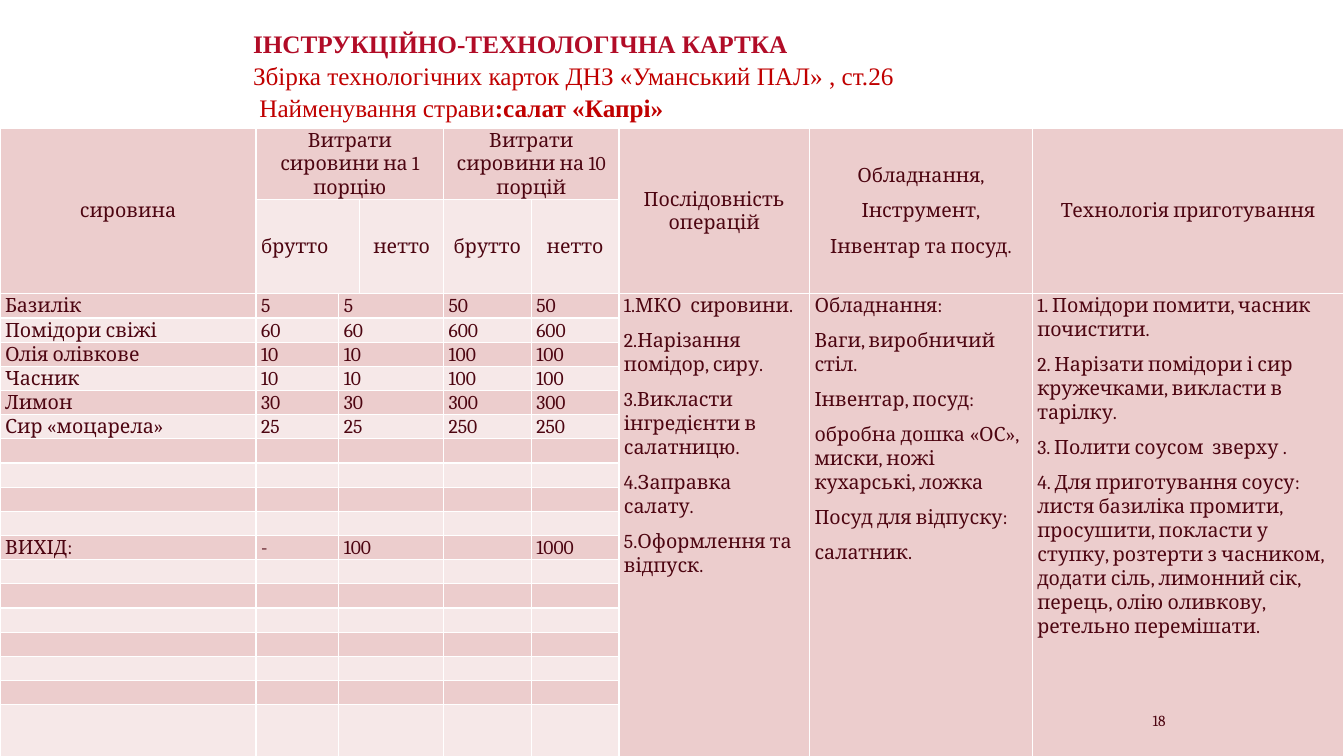
from lxml import etree
from pptx import Presentation
from pptx.dml.color import RGBColor
from pptx.enum.text import MSO_ANCHOR, MSO_AUTO_SIZE, PP_ALIGN
from pptx.oxml.ns import qn
from pptx.util import Inches, Pt

CRIMSON = RGBColor(0xB1, 0x0C, 0x27)
RED = RGBColor(0xC0, 0x00, 0x00)
MAROON = RGBColor(0x4D, 0x05, 0x11)
ROSE = RGBColor(0xEC, 0xCD, 0xCD)
PALE_ROSE = RGBColor(0xF6, 0xE8, 0xE8)
BORDER = "FFFFFF"
LEFT, CENTER, RIGHT = PP_ALIGN.LEFT, PP_ALIGN.CENTER, PP_ALIGN.RIGHT
TOP, MIDDLE, BOTTOM = MSO_ANCHOR.TOP, MSO_ANCHOR.MIDDLE, MSO_ANCHOR.BOTTOM

COLUMN_WIDTHS = [2.54, 0.82, 0.21, 0.83, 0.87, 0.87, 1.89, 2.21, 3.09]
ROW_HEIGHTS = [0.7, 0.93] + [0.24] * 17 + [1.38]
FIRST_BODY_ROW = 2
TOTAL_ROW = 12
INGREDIENT_COLUMNS = [0, 1, 2, 4, 5]

# (row, column, last row, last column, paragraphs, alignment)
HEADERS = [
    (0, 0, 1, 0, ["сировина"], CENTER),
    (0, 1, 0, 3, ["Витрати сировини на 1 порцію"], CENTER),
    (0, 4, 0, 5, ["Витрати сировини на 10 порцій"], CENTER),
    (0, 6, 1, 6, ["Послідовність операцій"], CENTER),
    (0, 7, 1, 7, ["Обладнання,", "Інструмент,", "Інвентар та посуд."], CENTER),
    (0, 8, 1, 8, ["Технологія приготування"], CENTER),
    (1, 1, 1, 2, ["брутто"], LEFT),
    (1, 3, 1, 3, ["нетто"], CENTER),
    (1, 4, 1, 4, ["брутто"], CENTER),
    (1, 5, 1, 5, ["нетто"], CENTER),
]
INGREDIENTS = [
    ("Базилік", "5", "5", "50", "50"),
    ("Помідори свіжі", "60", "60", "600", "600"),
    ("Олія олівкове", "10", "10", "100", "100"),
    ("Часник", "10", "10", "100", "100"),
    ("Лимон", "30", "30", "300", "300"),
    ("Сир «моцарела»", "25", "25", "250", "250"),
]
TOTAL = ("ВИХІД:", "-", "100", "", "1000")
DESCRIPTIONS = {
    6: ["1.МКО  сировини.", "2.Нарізання помідор, сиру.",
        "3.Викласти  інгредієнти в салатницю.", "4.Заправка салату.",
        "5.Оформлення та відпуск."],
    7: ["Обладнання:", "Ваги, виробничий стіл.", "Інвентар, посуд:",
        "обробна дошка «ОС», миски, ножі кухарські, ложка",
        "Посуд для відпуску:", "салатник."],
    8: ["1. Помідори помити, часник почистити.",
        "2. Нарізати помідори і сир кружечками, викласти в тарілку.",
        "3. Полити соусом  зверху .",
        "4. Для приготування соусу: листя базиліка промити, просушити, "
        "покласти у ступку, розтерти з часником, додати сіль, лимонний сік, "
        "перець, олію оливкову, ретельно перемішати."],
}


def add_text(paragraph, text, *, size=14, font="Cambria", color=MAROON, bold=False):
    run = paragraph.add_run()
    run.text = text
    run.font.size = Pt(size)
    run.font.name = font
    run.font.color.rgb = color
    run.font.bold = bold


def set_spacing(paragraph):
    paragraph.line_spacing = 1.06
    paragraph.space_after = Pt(8)


def add_title(slide, left, top, width, height):
    title = slide.shapes.title
    title.left, title.top = Inches(left), Inches(top)
    title.width, title.height = Inches(width), Inches(height)
    frame = title.text_frame
    frame.word_wrap = True
    frame.auto_size = MSO_AUTO_SIZE.NONE
    frame.vertical_anchor = BOTTOM
    heading = frame.paragraphs[0]
    heading.alignment = LEFT
    set_spacing(heading)
    style = {"size": 18, "font": "Times New Roman"}
    add_text(heading, "ІНСТРУКЦІЙНО-ТЕХНОЛОГІЧНА КАРТКА", color=CRIMSON, bold=True, **style)
    heading.add_line_break()
    add_text(heading, "Збірка технологічних карток ДНЗ «Уманський ПАЛ» , ст.26",
             color=RED, **style)
    heading.add_line_break()
    add_text(heading, " Найменування страви", color=RED, **style)
    add_text(heading, ":салат «Капрі»", color=RED, bold=True, **style)


def format_cell(cell, fill):
    properties = cell._tc.get_or_add_tcPr()
    for side in ("a:lnL", "a:lnR", "a:lnT", "a:lnB"):
        line = etree.SubElement(properties, qn(side), w=str(Pt(1)))
        solid = etree.SubElement(line, qn("a:solidFill"))
        etree.SubElement(solid, qn("a:srgbClr"), val=BORDER)
    cell.fill.solid()
    cell.fill.fore_color.rgb = fill
    cell.margin_left = cell.margin_right = Inches(0.05)
    cell.margin_top = cell.margin_bottom = 0
    # An empty cell takes its line height from the end-of-paragraph size.
    etree.SubElement(cell.text_frame.paragraphs[0]._p, qn("a:endParaRPr"), sz="1400")


def fill_cell(cell, lines, alignment=LEFT, anchor=TOP):
    cell.vertical_anchor = anchor
    frame = cell.text_frame
    for index, line in enumerate(lines):
        paragraph = frame.add_paragraph() if index else frame.paragraphs[0]
        paragraph.alignment = alignment
        set_spacing(paragraph)
        add_text(paragraph, line)


def add_recipe_table(slide, left, top):
    rows, columns = len(ROW_HEIGHTS), len(COLUMN_WIDTHS)
    recipe = slide.shapes.add_table(
        rows, columns, Inches(left), Inches(top),
        Inches(sum(COLUMN_WIDTHS)), Inches(sum(ROW_HEIGHTS))).table
    recipe.first_row = recipe.horz_banding = False
    for column, width in zip(recipe.columns, COLUMN_WIDTHS):
        column.width = Inches(width)
    for row, height in zip(recipe.rows, ROW_HEIGHTS):
        row.height = Inches(height)

    for row in range(rows):
        for column in range(columns):
            banded = row % 2 and column not in DESCRIPTIONS
            format_cell(recipe.cell(row, column), PALE_ROSE if banded else ROSE)

    for row, column, last_row, last_column, lines, alignment in HEADERS:
        header = recipe.cell(row, column)
        if (row, column) != (last_row, last_column):
            header.merge(recipe.cell(last_row, last_column))
        fill_cell(header, lines, alignment, MIDDLE)

    for row in range(FIRST_BODY_ROW, rows):
        recipe.cell(row, 2).merge(recipe.cell(row, 3))
    body = dict(enumerate(INGREDIENTS, FIRST_BODY_ROW))
    body[TOTAL_ROW] = TOTAL
    for row, values in body.items():
        for column, value in zip(INGREDIENT_COLUMNS, values):
            if value:
                fill_cell(recipe.cell(row, column), [value])

    for column, lines in DESCRIPTIONS.items():
        description = recipe.cell(FIRST_BODY_ROW, column)
        description.merge(recipe.cell(rows - 1, column))
        fill_cell(description, lines)


def add_slide_number(slide, left, top, width, height):
    number = slide.shapes.add_textbox(Inches(left), Inches(top), Inches(width), Inches(height))
    frame = number.text_frame
    frame.word_wrap = True
    frame.vertical_anchor = MIDDLE
    frame.paragraphs[0].alignment = RIGHT
    add_text(frame.paragraphs[0], "18", size=11)


def main():
    deck = Presentation()
    deck.slide_width, deck.slide_height = Inches(13.33), Inches(7.5)
    slide = deck.slides.add_slide(deck.slide_layouts[5])
    add_title(slide, 2.41, 0, 8.82, 1.27)
    add_recipe_table(slide, 0, 1.27)
    add_slide_number(slide, 10.66, 7, 1, 0.3)
    deck.save("out.pptx")


if __name__ == "__main__":
    main()
